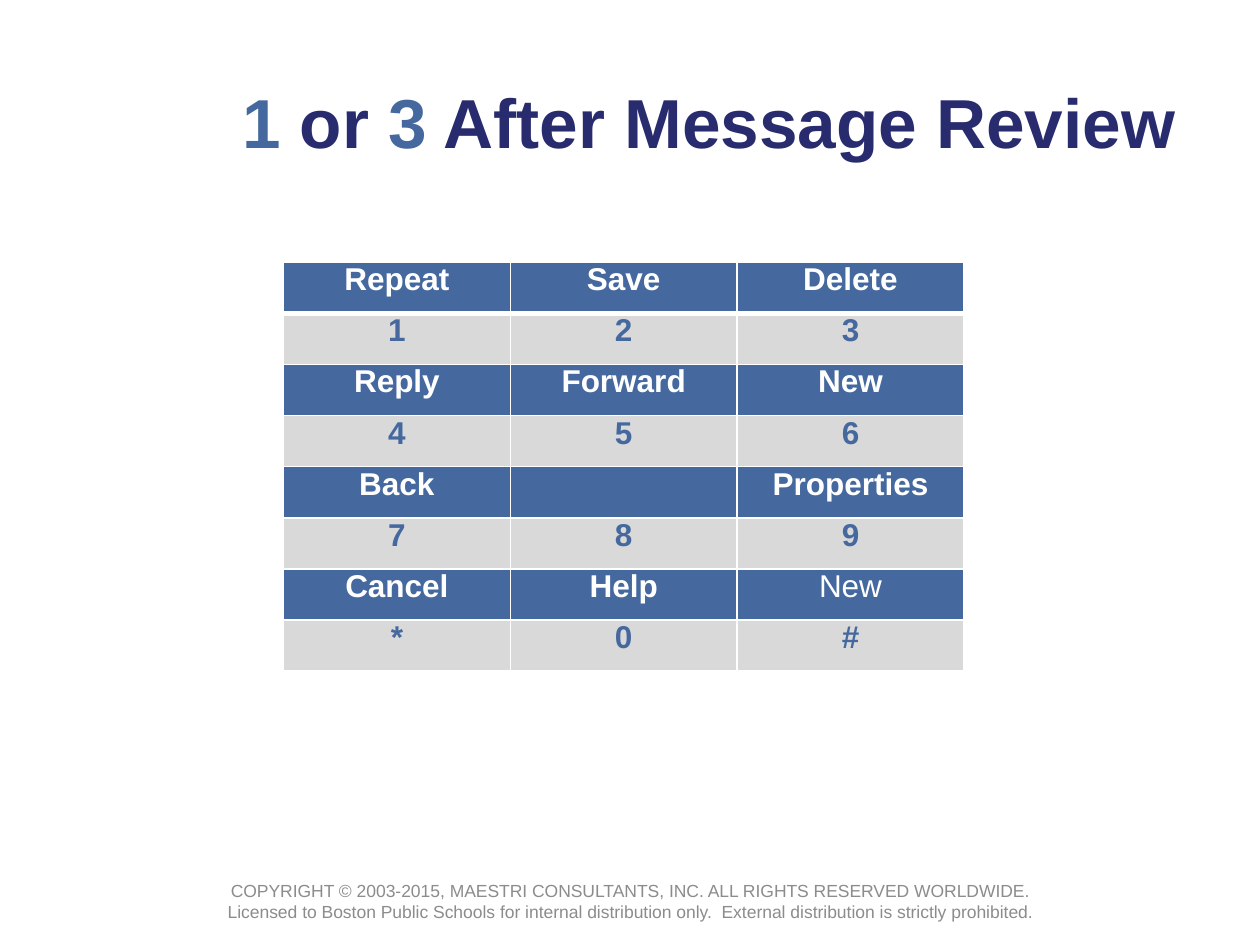
import dataclasses

import pptx
import pptx.dml.color
import pptx.enum.text
import pptx.oxml
import pptx.oxml.ns
import pptx.util

Inches = pptx.util.Inches
Pt = pptx.util.Pt
RGBColor = pptx.dml.color.RGBColor

BLUE = RGBColor(0x45, 0x69, 0x9E)
NAVY = RGBColor(0x28, 0x2B, 0x6D)
GRAY = RGBColor(0x8C, 0x8C, 0x8C)
SILVER = RGBColor(0xD9, 0xD9, 0xD9)
WHITE = RGBColor(0xFF, 0xFF, 0xFF)
FONT = "Arial"


@dataclasses.dataclass(frozen=True)
class Span:
    text: str
    size: float
    color: RGBColor
    bold: bool = True


@dataclasses.dataclass(frozen=True)
class Key:
    symbol: str
    action: str
    bold: bool = True


TITLE = [
    Span("1", 39.6, BLUE),
    Span(" or ", 39.6, NAVY),
    Span("3", 39.6, BLUE),
    Span(" After Message Review", 39.6, NAVY),
]
FOOTER = [
    Span("COPYRIGHT © 2003-2015, MAESTRI CONSULTANTS, INC. ALL RIGHTS RESERVED WORLDWIDE. ", 10, GRAY, False),
    Span("Licensed to Boston Public Schools for internal distribution only.  "
         "External distribution is strictly prohibited.", 10, GRAY, False),
]
KEYPAD = [
    [Key("1", "Repeat"), Key("2", "Save"), Key("3", "Delete")],
    [Key("4", "Reply"), Key("5", "Forward"), Key("6", "New")],
    [Key("7", "Back"), Key("8", ""), Key("9", "Properties")],
    [Key("*", "Cancel"), Key("0", "Help"), Key("#", "New", bold=False)],
]


def write_spans(frame, spans: list[Span]) -> None:
    para = frame.paragraphs[0]
    para.alignment = pptx.enum.text.PP_ALIGN.CENTER
    for span in spans:
        run = para.add_run()
        run.text = span.text
        run.font.name = FONT
        run.font.size = Pt(span.size)
        run.font.bold = span.bold
        run.font.color.rgb = span.color


def add_text(page, left: float, top: float, width: float, height: float, spans: list[Span]) -> None:
    box = page.shapes.add_textbox(Inches(left), Inches(top), Inches(width), Inches(height))
    box.text_frame.word_wrap = True
    box.text_frame.vertical_anchor = pptx.enum.text.MSO_ANCHOR.MIDDLE
    write_spans(box.text_frame, spans)


def set_borders(cell, widths: dict[str, float]) -> None:
    properties = cell._tc.get_or_add_tcPr()
    for position, (side, width) in enumerate(widths.items()):
        line = pptx.oxml.parse_xml(
            f'<a:{side} {pptx.oxml.ns.nsdecls("a")} w="{Pt(width)}">'
            f'<a:solidFill><a:srgbClr val="{WHITE}"/></a:solidFill></a:{side}>'
        )
        properties.insert(position, line)


def fill_cell(cell, span: Span, fill: RGBColor, top: float, bottom: float) -> None:
    cell.margin_left = cell.margin_right = Inches(0.07)
    cell.margin_top = cell.margin_bottom = Inches(0)
    cell.fill.solid()
    cell.fill.fore_color.rgb = fill
    set_borders(cell, {"lnL": 1, "lnR": 1, "lnT": top, "lnB": bottom})
    write_spans(cell.text_frame, [span] if span.text else [])


def add_keypad(page, keypad: list[list[Key]]) -> None:
    table = page.shapes.add_table(
        2 * len(keypad), len(keypad[0]), Inches(2.25), Inches(2.08), Inches(5.4), Inches(3.25)
    ).table
    for index, keys in enumerate(keypad):
        divider = 3 if index == 0 else 1
        for column, key in enumerate(keys):
            action = Span(key.action, 18, WHITE, key.bold)
            symbol = Span(key.symbol, 18, BLUE)
            fill_cell(table.cell(2 * index, column), action, BLUE, 1, divider)
            fill_cell(table.cell(2 * index + 1, column), symbol, SILVER, divider, 1)


def main() -> None:
    deck = pptx.Presentation()
    deck.slide_width = Inches(10)
    deck.slide_height = Inches(7.5)
    page = deck.slides.add_slide(deck.slide_layouts[6])
    add_text(page, 1.75, 0.33, 7.75, 1.25, TITLE)
    add_text(page, 1.5, 6.95, 7, 0.4, FOOTER)
    add_keypad(page, KEYPAD)
    deck.save("out.pptx")


if __name__ == "__main__":
    main()
